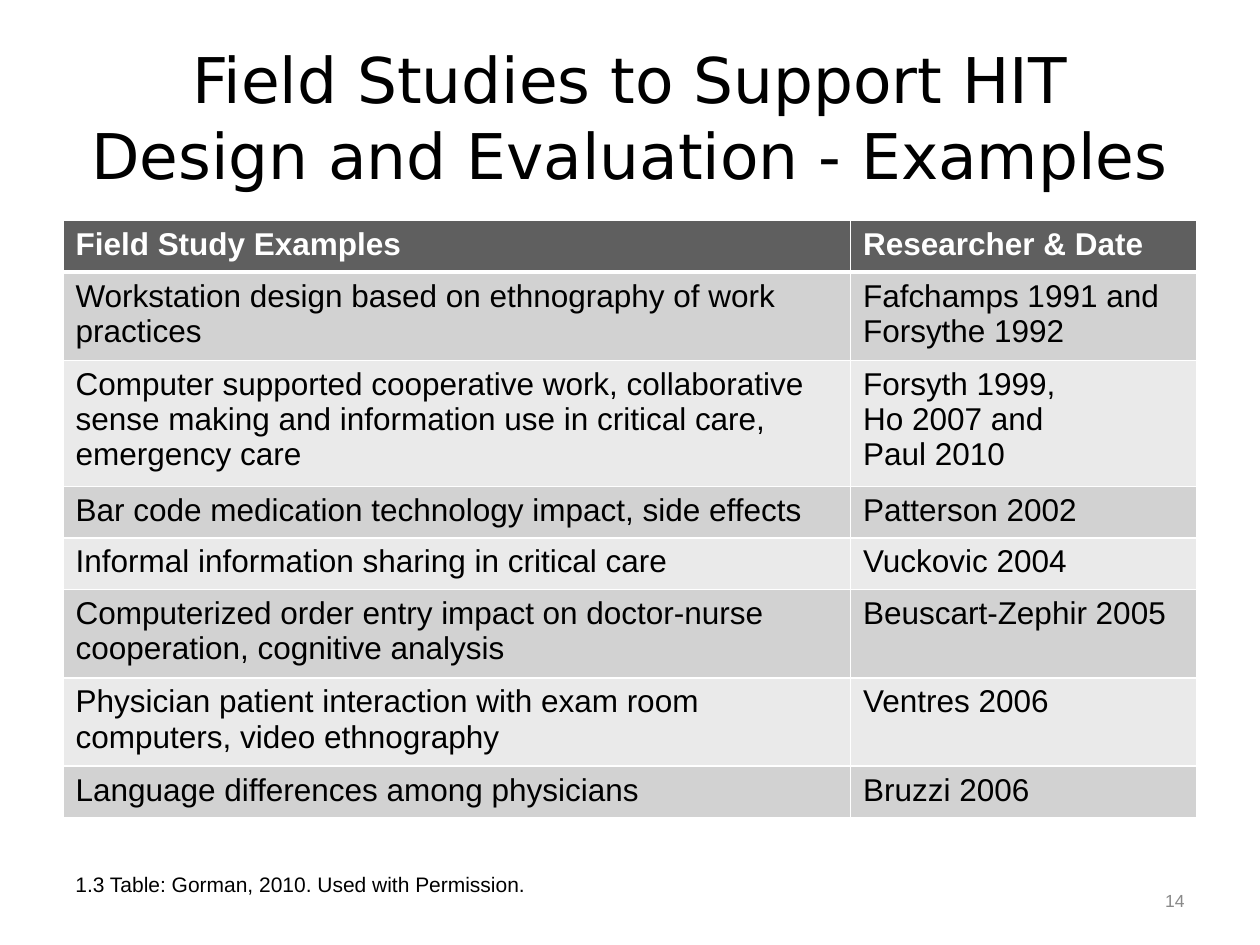
"""Build the slide of field study examples with its table."""
from lxml.etree import SubElement
from pptx import Presentation
from pptx.dml.color import RGBColor
from pptx.enum.text import MSO_ANCHOR, PP_ALIGN
from pptx.oxml.ns import qn
from pptx.util import Inches, Pt

BLACK = RGBColor(0x00, 0x00, 0x00)
WHITE = RGBColor(0xFF, 0xFF, 0xFF)
GREY = RGBColor(0x89, 0x89, 0x89)
HEADER = RGBColor(0x5F, 0x5F, 0x5F)
BANDS = (RGBColor(0xEA, 0xEA, 0xEA), RGBColor(0xD2, 0xD2, 0xD2))

STUDIES = [
    ("Field Study Examples", "Researcher & Date"),
    ("Workstation design based on ethnography of work practices",
     "Fafchamps 1991 and\nForsythe 1992"),
    ("Computer supported cooperative work, collaborative sense making "
     "and information use in critical care, emergency care",
     "Forsyth 1999,", "Ho 2007 and\nPaul 2010"),
    ("Bar code medication technology impact, side effects", "Patterson 2002"),
    ("Informal information sharing in critical care", "Vuckovic 2004"),
    ("Computerized order entry impact on doctor-nurse cooperation, "
     "cognitive analysis", "Beuscart-Zephir 2005"),
    ("Physician patient interaction with exam room computers, "
     "video ethnography", "Ventres 2006"),
    ("Language differences among physicians", "Bruzzi 2006"),
]


class SlideBuilder:
    def __init__(self, page, font="Arial"):
        self.page = page
        self.font = font

    def fill_frame(self, frame, lines, color=BLACK, align=PP_ALIGN.LEFT, **formats):
        values = {"name": self.font, "size": Pt(18), "bold": False, **formats}
        for index, line in enumerate(lines):
            para = frame.add_paragraph() if index else frame.paragraphs[0]
            para.text = line
            para.alignment = align
            for span in para.runs:
                span.font.color.rgb = color
                for key, value in values.items():
                    setattr(span.font, key, value)

    def text(self, line, left, top, width, height,
             anchor=MSO_ANCHOR.TOP, **formats):
        box = self.page.shapes.add_textbox(
            Inches(left), Inches(top), Inches(width), Inches(height))
        box.text_frame.word_wrap = True
        box.text_frame.vertical_anchor = anchor
        self.fill_frame(box.text_frame, [line], **formats)

    def border(self, cell, bottom):
        properties = cell._tc.get_or_add_tcPr()
        widths = {"lnL": 1, "lnR": 1, "lnT": 1, "lnB": bottom}
        for index, (side, points) in enumerate(widths.items()):
            line = SubElement(properties, qn(f"a:{side}"), w=str(Pt(points)))
            fill = SubElement(line, qn("a:solidFill"))
            SubElement(fill, qn("a:srgbClr"), val=str(WHITE))
            properties.remove(line)
            properties.insert(index, line)

    def table(self, rows, left, top, widths, row_height):
        table = self.page.shapes.add_table(
            len(rows), len(widths), Inches(left), Inches(top),
            Inches(sum(widths)), Inches(row_height * len(rows))).table
        for column, width in zip(table.columns, widths):
            column.width = Inches(width)
        for number, (study, *researchers) in enumerate(rows):
            is_header = number == 0
            for column, lines in enumerate(([study], researchers)):
                cell = table.cell(number, column)
                cell.fill.solid()
                cell.fill.fore_color.rgb = HEADER if is_header else BANDS[number % 2]
                self.border(cell, 3 if is_header else 1)
                self.fill_frame(cell.text_frame, lines, bold=is_header,
                                color=WHITE if is_header else BLACK)


def main():
    deck = Presentation()
    deck.slide_width, deck.slide_height = Inches(10), Inches(7.5)
    builder = SlideBuilder(deck.slides.add_slide(deck.slide_layouts[6]))
    builder.text("Field Studies to Support HIT Design and Evaluation - Examples",
                 0.5, 0.3, 9, 1.25, anchor=MSO_ANCHOR.MIDDLE,
                 align=PP_ALIGN.CENTER, name="DejaVu Sans", size=Pt(36))
    builder.table(STUDIES, 0.5, 1.75, (6.25, 2.75), 0.41)
    builder.text("1.3 Table: Gorman, 2010. Used with Permission.",
                 0.5, 6.87, 8.35, 0.58, size=Pt(12))
    builder.text("14", 8.94, 6.85, 0.56, 0.6, anchor=MSO_ANCHOR.MIDDLE,
                 align=PP_ALIGN.RIGHT, color=GREY, size=Pt(10))
    deck.save("out.pptx")


if __name__ == "__main__":
    main()
